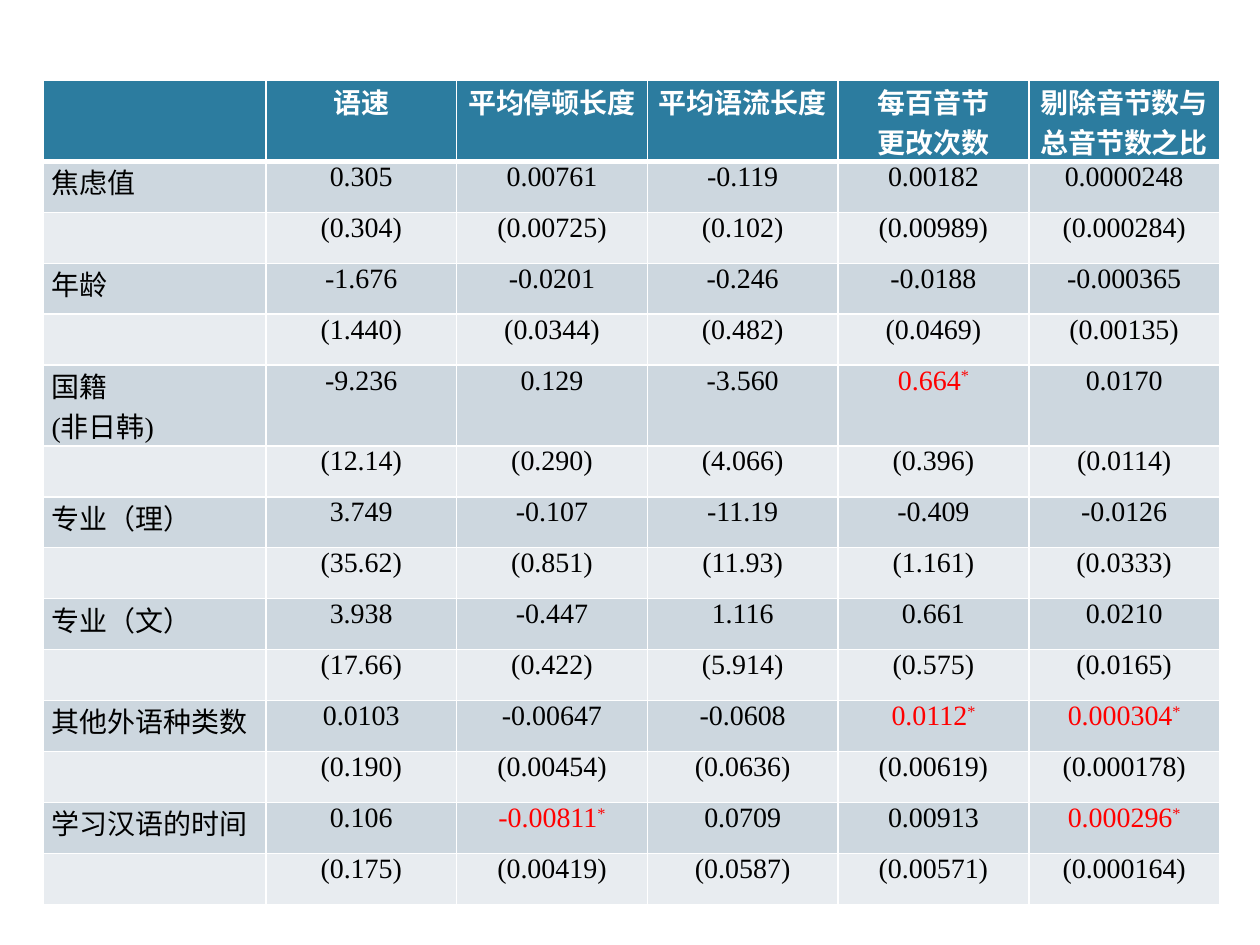
"""Builds a slide with a regression table of speech fluency measures."""
import lxml.etree
import pptx
import pptx.dml.color
import pptx.enum.text
import pptx.oxml.ns
import pptx.util

Inches = pptx.util.Inches
RGBColor = pptx.dml.color.RGBColor
qn = pptx.oxml.ns.qn

WHITE = RGBColor(0xFF, 0xFF, 0xFF)
BLACK = RGBColor(0, 0, 0)
RED = RGBColor(0xFF, 0, 0)
HEADER_FILL = RGBColor(0x2C, 0x7C, 0x9F)
ESTIMATE_FILL = RGBColor(0xCD, 0xD7, 0xDF)
ERROR_FILL = RGBColor(0xE8, 0xEC, 0xF0)

FONT = "Times New Roman"
LABEL_WIDTH = 1.77
TABLE_WIDTH = 9.34

HEADER = ["", "语速", "平均停顿长度", "平均语流长度", "每百音节\n更改次数", "剔除音节数与总音节数之比"]
ROWS = [
    ["焦虑值", "0.305", "0.00761", "-0.119", "0.00182", "0.0000248"],
    ["", "(0.304)", "(0.00725)", "(0.102)", "(0.00989)", "(0.000284)"],
    ["年龄", "-1.676", "-0.0201", "-0.246", "-0.0188", "-0.000365"],
    ["", "(1.440)", "(0.0344)", "(0.482)", "(0.0469)", "(0.00135)"],
    ["国籍\n(非日韩)", "-9.236", "0.129", "-3.560", "0.664*", "0.0170"],
    ["", "(12.14)", "(0.290)", "(4.066)", "(0.396)", "(0.0114)"],
    ["专业（理）", "3.749", "-0.107", "-11.19", "-0.409", "-0.0126"],
    ["", "(35.62)", "(0.851)", "(11.93)", "(1.161)", "(0.0333)"],
    ["专业（文）", "3.938", "-0.447", "1.116", "0.661", "0.0210"],
    ["", "(17.66)", "(0.422)", "(5.914)", "(0.575)", "(0.0165)"],
    ["其他外语种类数", "0.0103", "-0.00647", "-0.0608", "0.0112*", "0.000304*"],
    ["", "(0.190)", "(0.00454)", "(0.0636)", "(0.00619)", "(0.000178)"],
    ["学习汉语的时间", "0.106", "-0.00811*", "0.0709", "0.00913", "0.000296*"],
    ["", "(0.175)", "(0.00419)", "(0.0587)", "(0.00571)", "(0.000164)"],
]


def set_borders(cell, top, bottom):
    """Draws white borders, with the top and bottom widths given in points."""
    properties = cell._tc.get_or_add_tcPr()
    widths = {"a:lnL": 1, "a:lnR": 1, "a:lnT": top, "a:lnB": bottom}
    for position, (tag, width) in enumerate(widths.items()):
        line = lxml.etree.Element(qn(tag), w=str(pptx.util.Pt(width)))
        fill = lxml.etree.SubElement(line, qn("a:solidFill"))
        lxml.etree.SubElement(fill, qn("a:srgbClr"), val=str(WHITE))
        properties.insert(position, line)


def write_cell(cell, text, color, bold, centred):
    """Writes the text, with a starred value in red and its star raised."""
    value, star, _ = text.partition("*")
    cell.text_frame.text = value
    if star:
        raised = cell.text_frame.paragraphs[0].add_run()
        raised.text = star
        raised._r.get_or_add_rPr().set("baseline", "30000")
    for para in cell.text_frame.paragraphs:
        if centred:
            para.alignment = pptx.enum.text.PP_ALIGN.CENTER
        for span in para.runs:
            span.font.name = FONT
            span.font.size = pptx.util.Pt(16)
            span.font.bold = bold
            span.font.color.rgb = RED if star else color


def style_cell(cell, fill):
    """Sets the margins and the fill of a cell."""
    cell.margin_left = cell.margin_right = Inches(0.07)
    cell.margin_top = cell.margin_bottom = 0
    cell.fill.solid()
    cell.fill.fore_color.rgb = fill


def add_results_table(page):
    """Adds the table of estimates and standard errors."""
    content = [HEADER] + ROWS
    frame = page.shapes.add_table(
        len(content), len(HEADER),
        Inches(0.34), Inches(0.64), Inches(TABLE_WIDTH), Inches(6.07))
    table = frame.table
    value_width = (TABLE_WIDTH - LABEL_WIDTH) / (len(HEADER) - 1)
    for index, column in enumerate(table.columns):
        column.width = Inches(value_width if index else LABEL_WIDTH)
    for row, texts in enumerate(content):
        is_header = row == 0
        band = ESTIMATE_FILL if row % 2 else ERROR_FILL
        for column, text in enumerate(texts):
            cell = table.cell(row, column)
            style_cell(cell, HEADER_FILL if is_header else band)
            set_borders(cell, 3 if row == 1 else 1, 3 if is_header else 1)
            write_cell(cell, text, WHITE if is_header else BLACK, is_header, column > 0)


def main():
    """Builds and saves the deck."""
    deck = pptx.Presentation()
    deck.slide_width, deck.slide_height = Inches(10), Inches(7.5)
    page = deck.slides.add_slide(deck.slide_layouts[6])
    add_results_table(page)
    deck.save("out.pptx")


if __name__ == "__main__":
    main()
